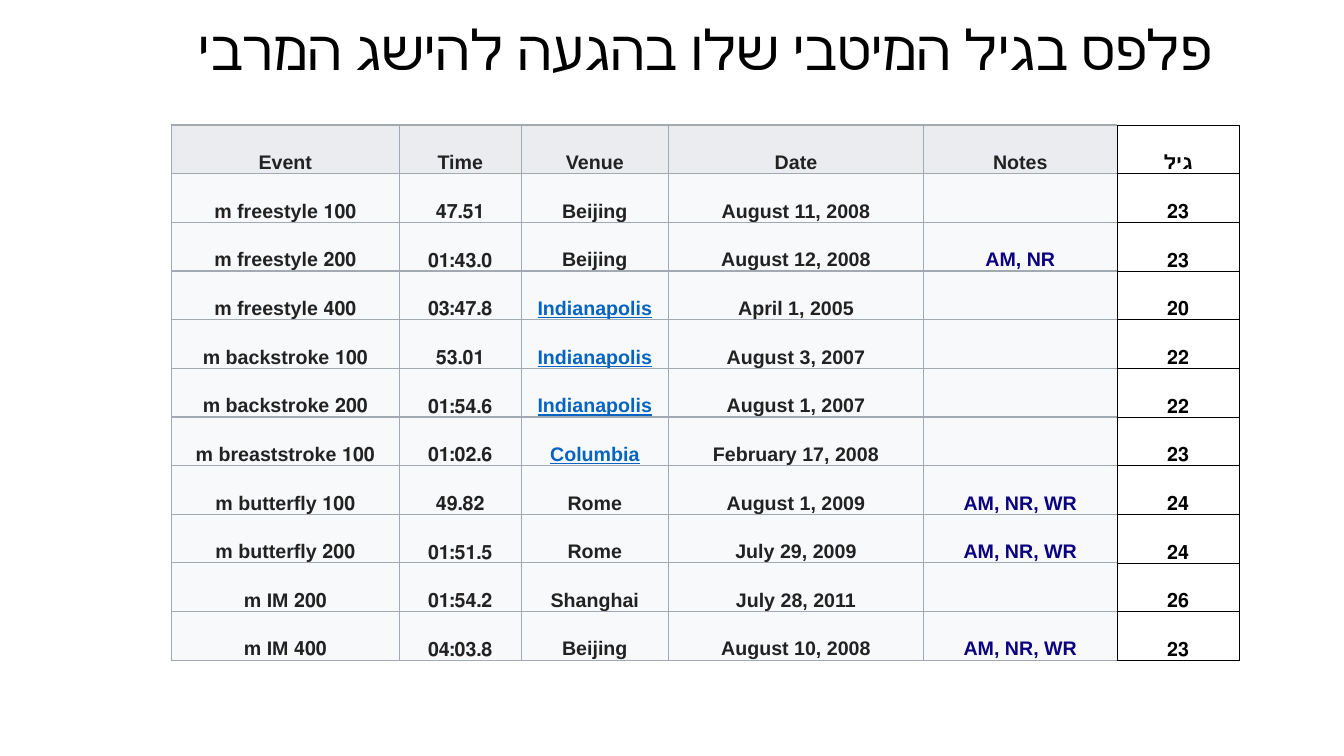
from lxml.etree import SubElement
from pptx import Presentation
from pptx.dml.color import RGBColor
from pptx.enum.text import MSO_ANCHOR as Anchor, PP_ALIGN as Align
from pptx.oxml.ns import qn
from pptx.util import Pt

PX = 9144
BLACK = RGBColor(0x00, 0x00, 0x00)
INK = RGBColor(0x22, 0x22, 0x22)
NAVY = RGBColor(0x0B, 0x00, 0x80)
LINK = RGBColor(0x05, 0x63, 0xC1)
GRID = RGBColor(0xA2, 0xA9, 0xB1)
HEAD = RGBColor(0xEA, 0xEC, 0xF0)
BODY = RGBColor(0xF8, 0xF9, 0xFA)

TITLE = "פלפס בגיל המיטבי שלו בהגעה להישג המרבי"
WIDTHS = [226, 121, 146, 253, 192, 121]
VENUE, NOTES, AGE = 2, 4, 5
LINKED = {"Indianapolis", "Columbia"}
ROWS = [
    ("Event", "Time", "Venue", "Date", "Notes", "גיל"),
    ("100 m freestyle", "47.51", "Beijing", "August 11, 2008", "", "23"),
    ("200 m freestyle", "01:43.0", "Beijing", "August 12, 2008", "AM, NR", "23"),
    ("400 m freestyle", "03:47.8", "Indianapolis", "April 1, 2005", "", "20"),
    ("100 m backstroke", "53.01", "Indianapolis", "August 3, 2007", "", "22"),
    ("200 m backstroke", "01:54.6", "Indianapolis", "August 1, 2007", "", "22"),
    ("100 m breaststroke", "01:02.6", "Columbia", "February 17, 2008", "", "23"),
    ("100 m butterfly", "49.82", "Rome", "August 1, 2009", "AM, NR, WR", "24"),
    ("200 m butterfly", "01:51.5", "Rome", "July 29, 2009", "AM, NR, WR", "24"),
    ("200 m IM", "01:54.2", "Shanghai", "July 28, 2011", "", "26"),
    ("400 m IM", "04:03.8", "Beijing", "August 10, 2008", "AM, NR, WR", "23"),
]


def style(para, face, size, color, bold=False):
    """Centre a right-to-left paragraph and set its font."""
    para.alignment = Align.CENTER
    para._p.get_or_add_pPr().set("rtl", "1")
    font = para.font
    font.name, font.size, font.bold = face, Pt(size), bold
    font.color.rgb = color


def add_title(slide):
    """Place and format the slide title."""
    title = slide.shapes.title
    title.left, title.top = 170 * PX, 0
    title.width, title.height = 1059 * PX, 104 * PX
    frame = title.text_frame
    frame.text = TITLE
    frame.vertical_anchor = Anchor.MIDDLE
    para = frame.paragraphs[0]
    para.line_spacing = 0.9
    style(para, "Calibri", 39.6, BLACK)


def add_edge(cell, side, color, width):
    """Draw one border of a cell."""
    line = SubElement(cell._tc.get_or_add_tcPr(), qn(f"a:ln{side}"), w=str(Pt(width)))
    fill = SubElement(line, qn("a:solidFill"))
    SubElement(fill, qn("a:srgbClr"), val=str(color))


def fill_cell(cell, text, row, col):
    """Write, border and fill one cell by its place in the table."""
    cell.text = text
    cell.vertical_anchor = Anchor.BOTTOM
    cell.margin_left = cell.margin_right = cell.margin_top = PX
    cell.margin_bottom = 0
    for side in "LRTB":
        dark = col == AGE or (col == NOTES and side == "R")
        add_edge(cell, side, *((BLACK, 0.5) if dark else (GRID, 1)))
    if col == AGE:
        cell.fill.background()
    else:
        cell.fill.solid()
        cell.fill.fore_color.rgb = BODY if row else HEAD
    linked = col == VENUE and text in LINKED
    color = INK
    if col == AGE:
        color = BLACK
    elif linked:
        color = LINK
    elif row and col == NOTES:
        color = NAVY
    para = cell.text_frame.paragraphs[0]
    style(para, "Arial", 14, color, True)
    if linked:
        para.font.underline = True


def add_grid(slide):
    """Add the table of best times."""
    table = slide.shapes.add_table(
        len(ROWS), len(WIDTHS), 170 * PX, 124 * PX, sum(WIDTHS) * PX, 531 * PX
    ).table
    table.horz_banding = False
    for col, width in zip(table.columns, WIDTHS):
        col.width = width * PX
    for row, texts in enumerate(ROWS):
        for col, text in enumerate(texts):
            fill_cell(table.cell(row, col), text, row, col)


def main():
    """Build the slide and save it."""
    deck = Presentation()
    deck.slide_width, deck.slide_height = 1333 * PX, 750 * PX
    slide = deck.slides.add_slide(deck.slide_layouts[5])
    add_title(slide)
    add_grid(slide)
    deck.save("out.pptx")


if __name__ == "__main__":
    main()
